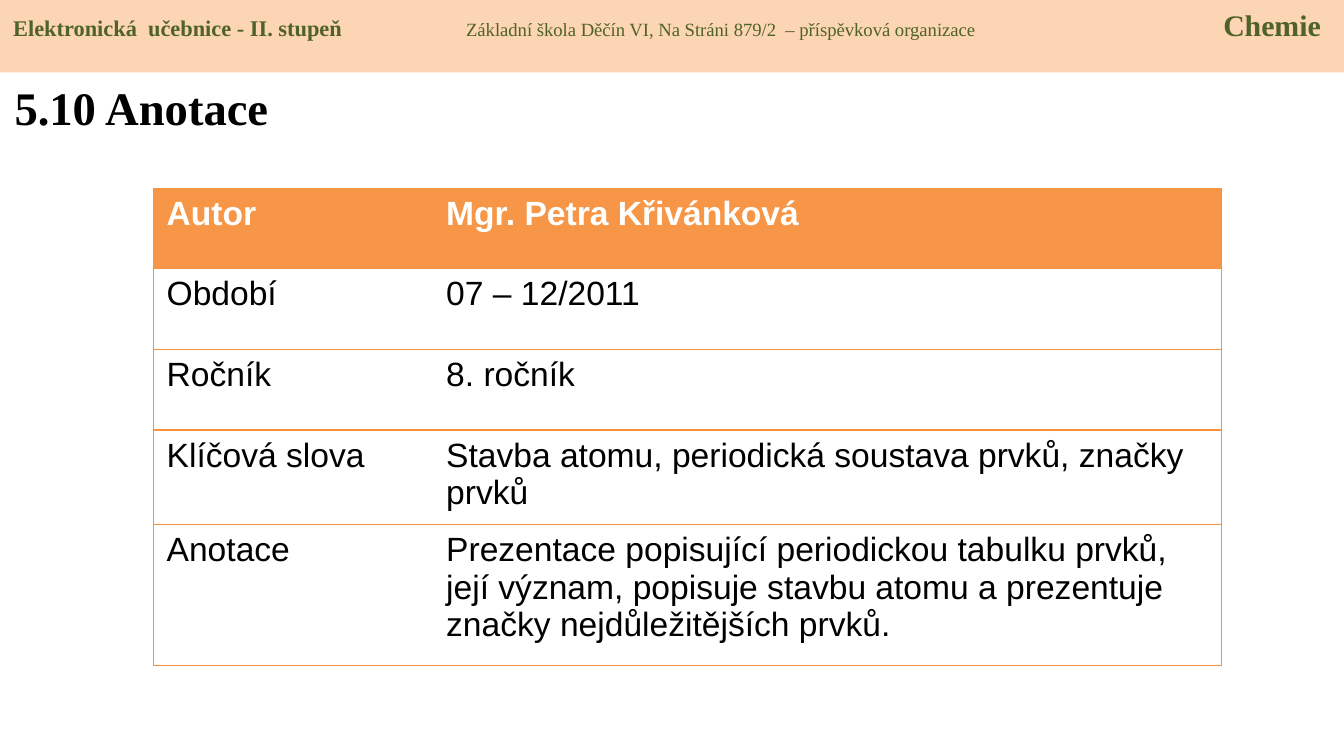
"""Build the annotation slide of a chemistry textbook."""
from lxml.etree import SubElement
from pptx import Presentation
from pptx.dml.color import RGBColor
from pptx.enum.shapes import MSO_SHAPE
from pptx.enum.text import MSO_ANCHOR, PP_ALIGN
from pptx.oxml.ns import qn
from pptx.util import Inches, Pt

HUES = {"band": "FCD5B5", "green": "4F6228", "head": "F79646",
        "line": "F69240", "black": "000000", "white": "FFFFFF"}


def add_run(para, text, size, face, hue, bold=False):
    run = para.add_run()
    run.text = text
    run.font.size = Pt(size)
    run.font.name = face
    run.font.bold = bold
    run.font.color.rgb = RGBColor.from_string(HUES[hue])


def add_edge(cell, side, shown):
    edge = SubElement(cell._tc.get_or_add_tcPr(), qn("a:ln" + side), w=str(Pt(0.75)))
    if shown:
        fill = SubElement(edge, qn("a:solidFill"))
        SubElement(fill, qn("a:srgbClr"), val=HUES["line"])
    else:
        SubElement(edge, qn("a:noFill"))


deck = Presentation()
deck.slide_width = Inches(10)
deck.slide_height = Inches(10) * 9 // 16
slide = deck.slides.add_slide(deck.slide_layouts[6])

title = slide.shapes.add_textbox(Inches(0.01), Inches(0.54), Inches(3.19), Inches(0.59))
frame = title.text_frame
frame.word_wrap = True
frame.vertical_anchor = MSO_ANCHOR.TOP
add_run(frame.paragraphs[0], "5.10 Anotace", 25, "Times New Roman", "black", True)

band = slide.shapes.add_shape(MSO_SHAPE.RECTANGLE, 0, 0, Inches(10), Inches(0.54))
band.shadow.inherit = False
band.fill.solid()
band.fill.fore_color.rgb = RGBColor.from_string(HUES["band"])
band.line.fill.background()
frame = band.text_frame
frame.word_wrap = True
frame.vertical_anchor = MSO_ANCHOR.TOP
frame.margin_top = Inches(0.05)
para = frame.paragraphs[0]
para.alignment = PP_ALIGN.LEFT
tabs = SubElement(para._p.get_or_add_pPr(), qn("a:tabLst"))
for place, kind in [(3.37, "l"), (9.73, "r")]:
    SubElement(tabs, qn("a:tab"), pos=str(Inches(place)), algn=kind)
for text, size, bold in [
    ("Elektronická  učebnice - II. stupeň\t", 12, True),
    ("Základní škola Děčín VI, Na Stráni 879/2  – příspěvková organizace\t", 10, False),
    ("Chemie", 16, True),
]:
    add_run(para, text, size, "Times New Roman", "green", bold)

facts = [
    ("Autor", "Mgr. Petra Křivánková", 0.6),
    ("Období", "07 – 12/2011", 0.6),
    ("Ročník", "8. ročník", 0.6),
    ("Klíčová slova", "Stavba atomu, periodická soustava prvků, značky prvků", 0.6),
    ("Anotace", "Prezentace popisující periodickou tabulku prvků, její význam, "
     "popisuje stavbu atomu a prezentuje značky nejdůležitějších prvků.", 1.05),
]
table = slide.shapes.add_table(len(facts), 2, Inches(1.14), Inches(1.4),
                               Inches(7.95), Inches(3.46)).table
table.horz_banding = False
for col, wide in zip(table.columns, (2.08, 5.87)):
    col.width = Inches(wide)
for row, (label, value, tall) in enumerate(facts):
    table.rows[row].height = Inches(tall)
    for col, text in enumerate((label, value)):
        cell = table.cell(row, col)
        for side, shown in [("L", col == 0), ("R", col == 1), ("T", True), ("B", True)]:
            add_edge(cell, side, shown)
        if row == 0:
            cell.fill.solid()
            cell.fill.fore_color.rgb = RGBColor.from_string(HUES["head"])
        else:
            cell.fill.background()
        hue = "white" if row == 0 else "black"
        add_run(cell.text_frame.paragraphs[0], text, 18, "Arial", hue, row == 0)

deck.save("out.pptx")
